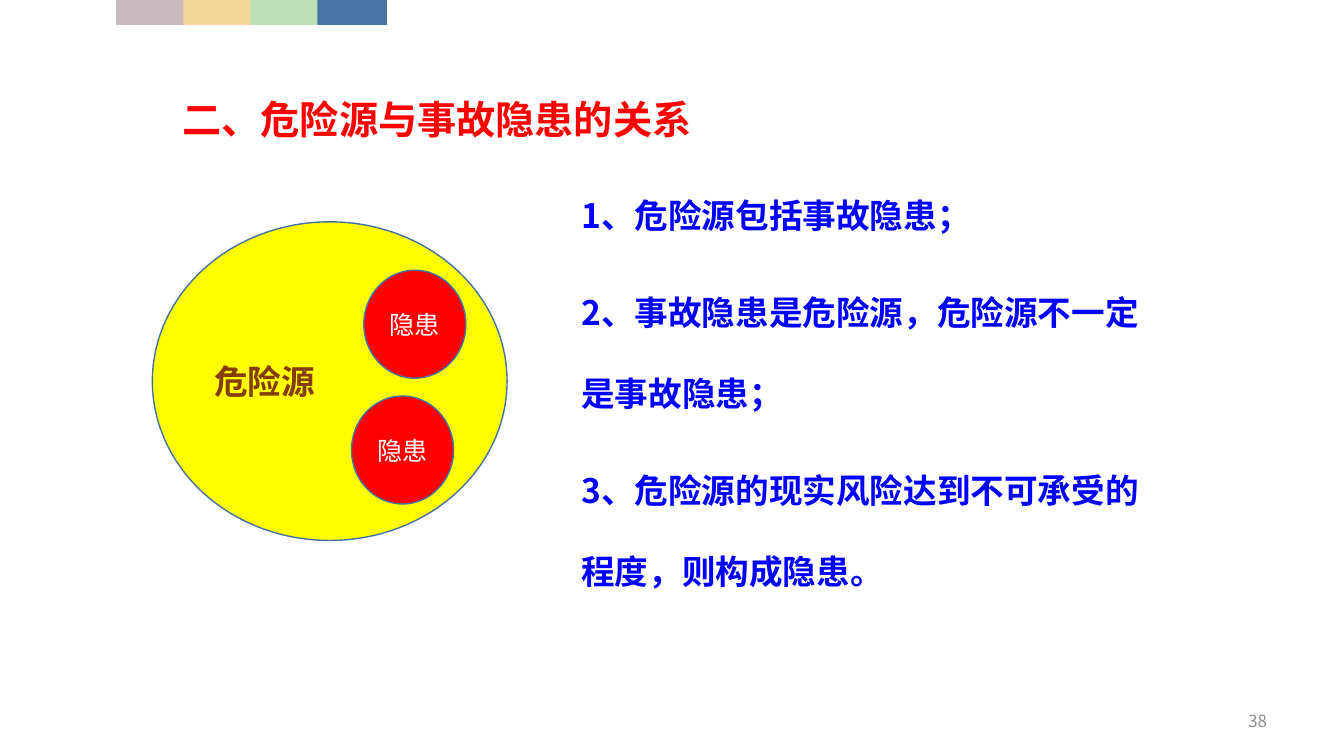
"""Build the slide on how hazards relate to hidden accident risks."""
from lxml import etree
from pptx import Presentation
from pptx import util as u
from pptx.dml.color import RGBColor
from pptx.enum import shapes, text
from pptx.oxml.ns import qn

FONT = "Noto Sans CJK SC"
MIDDLE = text.MSO_ANCHOR.MIDDLE
LEFT, CENTER, RIGHT = text.PP_ALIGN.LEFT, text.PP_ALIGN.CENTER, text.PP_ALIGN.RIGHT


def write(sp, *lines, size, color, bold=False, align=LEFT, anchor=MIDDLE,
          wrap=True, spacing=None, gap=0, shadow=False):
    tf = sp.text_frame
    tf.word_wrap = wrap
    tf.vertical_anchor = anchor
    for i, line in enumerate(lines):
        p = tf.add_paragraph() if i else tf.paragraphs[0]
        p.alignment = align
        if spacing:
            p.line_spacing = spacing
        if i:
            p.space_before = u.Pt(gap)
        r = p.add_run()
        r.text = line
        r.font.size = u.Pt(size)
        r.font.bold = bold
        r.font.color.rgb = RGBColor.from_string(color)
        rPr = r.font._element
        if shadow:
            effects = etree.SubElement(rPr, qn("a:effectLst"))
            outer = etree.SubElement(effects, qn("a:outerShdw"), blurRad="38100",
                                     dist="38100", dir="2700000", algn="tl")
            etree.SubElement(outer, qn("a:srgbClr"), val="000000")
        r.font.name = FONT
        etree.SubElement(rPr, qn("a:ea"), typeface=FONT)


def add_shape(s, kind, left, top, width, height, fill, line=None):
    sp = s.shapes.add_shape(kind, u.Cm(left), u.Cm(top), u.Cm(width), u.Cm(height))
    sp.shadow.inherit = False
    sp.fill.solid()
    sp.fill.fore_color.rgb = RGBColor.from_string(fill)
    if line:
        sp.line.color.rgb = RGBColor.from_string(line)
        sp.line.width = u.Pt(1)
    else:
        sp.line.fill.background()
    return sp


prs = Presentation()
prs.slide_width, prs.slide_height = u.Cm(33.87), u.Cm(19.05)
s = prs.slides.add_slide(prs.slide_layouts[6])

for i, color in enumerate(["CAB9BF", "F1D79A", "BCE1B6", "4975A4"]):
    add_shape(s, shapes.MSO_SHAPE.RECTANGLE, 2.93 + 1.69 * i, 0, 1.75, 0.63, color)

title = s.shapes.add_textbox(u.Cm(4.35), u.Cm(2.03), u.Cm(18.33), u.Cm(1.93))
write(title, "二、危险源与事故隐患的关系", size=28, color="FF0000", bold=True)

points = s.shapes.add_textbox(u.Cm(14.4), u.Cm(3.76), u.Cm(14.91), u.Cm(13.59))
write(points,
      "1、危险源包括事故隐患；",
      "2、事故隐患是危险源，危险源不一定是事故隐患；",
      "3、危险源的现实风险达到不可承受的程度，则构成隐患。",
      size=24, color="0000FF", bold=True, anchor=text.MSO_ANCHOR.TOP,
      spacing=2.0, gap=12, shadow=True)

hazard = add_shape(s, shapes.MSO_SHAPE.OVAL, 3.84, 5.59, 8.94, 8.03, "FFFF00", "43739E")
write(hazard, "危险源", size=24, color="843C0B", bold=True)

for left, top in [(8.86, 9.98), (9.17, 6.81)]:
    risk = add_shape(s, shapes.MSO_SHAPE.OVAL, left, top, 2.57, 2.72, "FF0000", "43739E")
    write(risk, "隐患", size=18, color="FFFFFF", align=CENTER, wrap=False)

number = s.shapes.add_textbox(u.Cm(24.28), u.Cm(17.65), u.Cm(7.9), u.Cm(1.02))
write(number, "38", size=12, color="8C8C8C", align=RIGHT)

prs.save("out.pptx")
